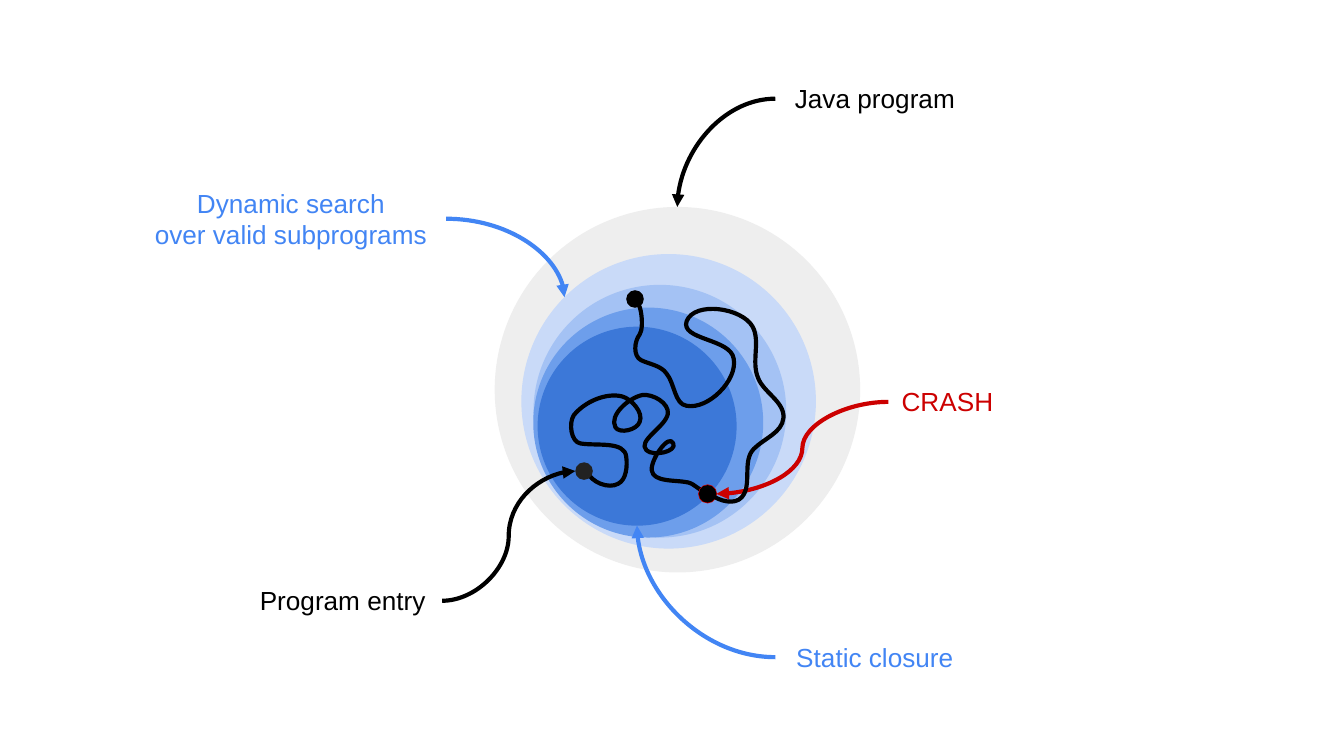
from itertools import pairwise
from math import cos, dist, radians, sin, sqrt

from pptx import Presentation
from pptx.dml.color import RGBColor
from pptx.enum.shapes import MSO_CONNECTOR, MSO_SHAPE
from pptx.enum.text import PP_ALIGN
from pptx.oxml.ns import qn
from pptx.oxml.xmlchemy import OxmlElement
from pptx.util import Pt

OVAL = MSO_SHAPE.OVAL
CURVE = MSO_CONNECTOR.CURVE
MID = PP_ALIGN.CENTER
START = PP_ALIGN.LEFT

BLACK = RGBColor(0x00, 0x00, 0x00)
DARK = RGBColor(0x22, 0x22, 0x22)
RED = RGBColor(0xCC, 0x00, 0x00)
BLUE = RGBColor(0x42, 0x85, 0xF4)
GREY = RGBColor(0xEE, 0xEE, 0xEE)
PALE = RGBColor(0xC9, 0xDA, 0xF8)
LIGHT = RGBColor(0xA4, 0xC2, 0xF4)
SOFT = RGBColor(0x6D, 0x9E, 0xEB)
DEEP = RGBColor(0x3C, 0x78, 0xD8)

STROKE = Pt(2.25)
UNIT = Pt(0.72)
INSET = Pt(7.2)
DOT = 4.7
PAD = 15.2
ROW = 16.5
BEND = "curvedConnector2"
WAVE = "curvedConnector3"

prs = Presentation()
prs.slide_width = Pt(720)
prs.slide_height = Pt(405)
slide = prs.slides.add_slide(prs.slide_layouts[6])
shapes = slide.shapes


def add_oval(x, y, radius, color):
    oval = shapes.add_shape(OVAL, Pt(x - radius), Pt(y - radius), Pt(2 * radius), Pt(2 * radius))
    oval.shadow.inherit = False
    oval.fill.solid()
    oval.fill.fore_color.rgb = color
    oval.line.fill.background()
    return oval


def add_trace(knots):
    points = []
    for (x1, y1, turn1), (x2, y2, turn2) in pairwise(knots):
        reach = dist((x1, y1), (x2, y2)) / 3
        out, back = radians(turn1), radians(turn2)
        points += [
            (round(x1 + reach * cos(out)), round(y1 + reach * sin(out))),
            (round(x2 - reach * cos(back)), round(y2 - reach * sin(back))),
            (x2, y2),
        ]
    pen = shapes.build_freeform(*knots[0][:2], scale=UNIT)
    pen.add_line_segments(points, close=False)
    trace = pen.convert_to_shape()
    trace.shadow.inherit = False
    trace.fill.background()
    trace.line.color.rgb = BLACK
    trace.line.width = STROKE
    steps = list(trace._element.iter(qn("a:lnTo")))
    for i in range(0, len(steps), 3):
        curve = OxmlElement("a:cubicBezTo")
        steps[i].addprevious(curve)
        for step in steps[i:i + 3]:
            curve.append(step[0])
            step.getparent().remove(step)


program = (362.9, 208.8, 97.9)
search = (358.2, 215, 78.9)
middle = (353.5, 220.3, 67.7)
inner = (347.3, 226.4, 61.6)
closure = (341.3, 228.3, 53.3)
entry = (312.9, 252.4, DOT)
crash = (379.1, 264.6, DOT)
finish = (340.2, 160.2, DOT)

rings = [(program, GREY), (search, PALE), (middle, LIGHT), (inner, SOFT), (closure, DEEP)]
for ring, color in rings:
    add_oval(*ring, color)

# x, y, heading
to_crash = [
    (437, 351, 69), (460, 360, -28), (466, 340, -96), (432, 330, -168),
    (427, 309, -53), (463, 295, 14), (476, 314, 111), (458, 318, -118),
    (478, 294, -9), (497, 308, 99), (481, 335, 45), (501, 330, -113),
    (485, 350, 81), (512, 359, 11), (526, 366, 0),
]
to_finish = [
    (529, 368, 40), (552, 370, -47), (561, 334, -45), (583, 311, -83),
    (564, 281, -111), (560, 243, -119), (511, 239, 111), (546, 267, 81),
    (511, 302, -171), (496, 278, -128), (477, 268, -153), (476, 249, -54),
    (473, 227, 113),
]

add_trace(to_crash)
add_oval(*entry, DARK)
halo = add_oval(*crash, RED)
halo.line.color.rgb = RED
halo.line.width = Pt(0.75)

top = (program[0], program[1] - program[2])
base = (closure[0], closure[1] + closure[2])
slant = search[2] / sqrt(2)
corner = (search[0] - slant, search[1] - slant)
before = (entry[0] - DOT, entry[1])
after = (crash[0] + DOT, crash[1])

right = [
    (["Java program"], 415.4, 52.9, 106.6, MID, BLACK, top, BEND),
    (["Static closure"], 415.4, 352.1, 106.6, MID, BLUE, base, BEND),
    (["CRASH"], 475.9, 215.3, 64.8, START, RED, after, WAVE),
]
left = [
    (["Dynamic search", "over valid subprograms"], 239, 117.2, 166.3, MID, BLUE, corner, BEND),
    (["Program entry"], 236.9, 321.9, 106.6, MID, BLACK, before, WAVE),
]
for side, labels in [(0, right), (1, left)]:
    for lines, x, y, width, align, color, goal, form in labels:
        height = PAD + ROW * len(lines)
        box = shapes.add_textbox(Pt(x - side * width), Pt(y - height / 2), Pt(width), Pt(height))
        frame = box.text_frame
        frame.word_wrap = True
        frame.margin_left = frame.margin_right = INSET
        frame.margin_top = frame.margin_bottom = INSET
        for i, line in enumerate(lines):
            para = frame.add_paragraph() if i else frame.paragraphs[0]
            para.alignment = align
            run = para.add_run()
            run.text = line
            run.font.size = Pt(14)
            run.font.name = "Arial"
            run.font.color.rgb = color

        arrow = shapes.add_connector(CURVE, Pt(x), Pt(y), Pt(goal[0]), Pt(goal[1]))
        arrow.line.color.rgb = color
        arrow.line.width = STROKE
        props = arrow._element.spPr
        props.find(qn("a:prstGeom")).set("prst", form)
        tip = OxmlElement("a:tailEnd")
        tip.set("type", "triangle")
        props.find(qn("a:ln")).append(tip)
        props.append(OxmlElement("a:effectLst"))

add_trace(to_finish)
for dot in [finish, crash]:
    add_oval(*dot, BLACK)

prs.save("out.pptx")
